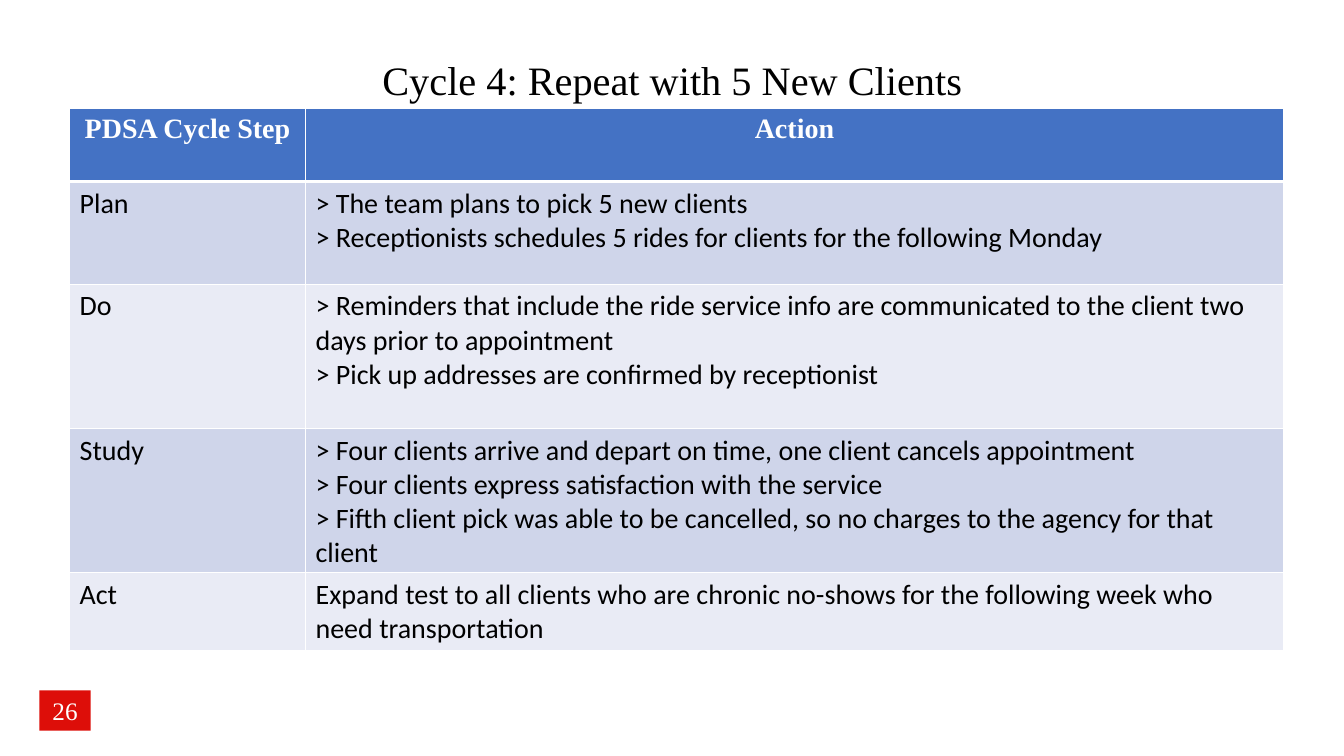
from dataclasses import dataclass

from lxml.etree import SubElement
from pptx import Presentation
from pptx.dml.color import RGBColor
from pptx.enum.shapes import MSO_SHAPE
from pptx.enum.text import MSO_ANCHOR, PP_ALIGN
from pptx.oxml.ns import qn
from pptx.util import Emu, Pt

EMU_PER_PX = 9144
SERIF, SANS = "Times New Roman", "Calibri"
WHITE, BLACK, RED, HEADER_BLUE = "FFFFFF", "000000", "DD0E09", "4472C4"
BAND_FILLS = ("CFD5EA", "E9EBF5")
COLUMN_WIDTHS = (234, 970)


@dataclass(frozen=True)
class TextStyle:
    font: str
    size: float
    color: str
    bold: bool = False
    align: PP_ALIGN = PP_ALIGN.CENTER


@dataclass(frozen=True)
class CycleRow:
    step: str
    actions: tuple[str, ...]
    height: int


TITLE_STYLE = TextStyle(SERIF, 28.8, BLACK)
HEADER_STYLE = TextStyle(SERIF, 20, WHITE, bold=True)
BODY_STYLE = TextStyle(SANS, 20, BLACK, align=PP_ALIGN.LEFT)
NUMBER_STYLE = TextStyle(SERIF, 18, WHITE)

ROWS = (
    CycleRow("PDSA Cycle Step", ("Action",), 72),
    CycleRow("Plan", (
        "> The team plans to pick 5 new clients",
        "> Receptionists schedules 5 rides for clients for the following Monday",
    ), 102),
    CycleRow("Do", (
        "> Reminders that include the ride service info are communicated "
        "to the client two days prior to appointment",
        "> Pick up addresses are confirmed by receptionist",
    ), 143),
    CycleRow("Study", (
        "> Four clients arrive and depart on time, one client cancels appointment",
        "> Four clients express satisfaction with the service",
        "> Fifth client pick was able to be cancelled, so no charges "
        "to the agency for that client",
    ), 143),
    CycleRow("Act", (
        "Expand test to all clients who are chronic no-shows "
        "for the following week who need transportation",
    ), 72),
)


def px(length: int) -> Emu:
    return Emu(length * EMU_PER_PX)


def box(left: int, top: int, width: int, height: int) -> tuple[Emu, ...]:
    return px(left), px(top), px(width), px(height)


def rgb(color: str) -> RGBColor:
    return RGBColor.from_string(color)


def write_text(text_frame, text: str, style: TextStyle) -> None:
    text_frame.text = text
    for paragraph in text_frame.paragraphs:
        paragraph.alignment = style.align
        for run in paragraph.runs:
            run.font.name = style.font
            run.font.size = Pt(style.size)
            run.font.bold = style.bold
            run.font.color.rgb = rgb(style.color)


def add_border(cell, side: str, points: int) -> None:
    """Draw one white cell edge; call before setting the cell's fill."""
    properties = cell._tc.get_or_add_tcPr()
    line = SubElement(properties, qn(f"a:ln{side}"), w=str(Pt(points)))
    fill = SubElement(line, qn("a:solidFill"))
    SubElement(fill, qn("a:srgbClr"), val=WHITE)


def add_title(slide) -> None:
    title = slide.shapes.add_textbox(*box(92, 55, 1150, 53))
    title.text_frame.word_wrap = True
    title.text_frame.vertical_anchor = MSO_ANCHOR.MIDDLE
    write_text(title.text_frame, "Cycle 4: Repeat with 5 New Clients", TITLE_STYLE)
    title.text_frame.paragraphs[0].line_spacing = 0.9


def add_cycle_table(slide) -> None:
    height = sum(row.height for row in ROWS)
    table = slide.shapes.add_table(
        len(ROWS), len(COLUMN_WIDTHS), *box(69, 108, sum(COLUMN_WIDTHS), height)
    ).table
    for column, width in zip(table.columns, COLUMN_WIDTHS):
        column.width = px(width)
    for index, row in enumerate(ROWS):
        table.rows[index].height = px(row.height)
        is_header = index == 0
        color = HEADER_BLUE if is_header else BAND_FILLS[(index - 1) % 2]
        style = HEADER_STYLE if is_header else BODY_STYLE
        # The rule under the header is shared by the first two rows.
        borders = {"L": 1, "R": 1, "T": 3 if index == 1 else 1, "B": 3 if is_header else 1}
        for column_index, text in enumerate((row.step, "\n".join(row.actions))):
            cell = table.cell(index, column_index)
            for side, points in borders.items():
                add_border(cell, side, points)
            cell.fill.solid()
            cell.fill.fore_color.rgb = rgb(color)
            write_text(cell.text_frame, text, style)


def add_slide_number(slide) -> None:
    badge = slide.shapes.add_shape(MSO_SHAPE.RECTANGLE, *box(39, 685, 51, 40))
    badge.shadow.inherit = False
    badge.fill.solid()
    badge.fill.fore_color.rgb = rgb(RED)
    badge.line.fill.background()
    badge.text_frame.word_wrap = False
    write_text(badge.text_frame, "26", NUMBER_STYLE)


def main() -> None:
    presentation = Presentation()
    presentation.slide_width, presentation.slide_height = px(1333), px(750)
    slide = presentation.slides.add_slide(presentation.slide_layouts[6])
    add_title(slide)
    add_cycle_table(slide)
    add_slide_number(slide)
    presentation.save("out.pptx")


if __name__ == "__main__":
    main()
